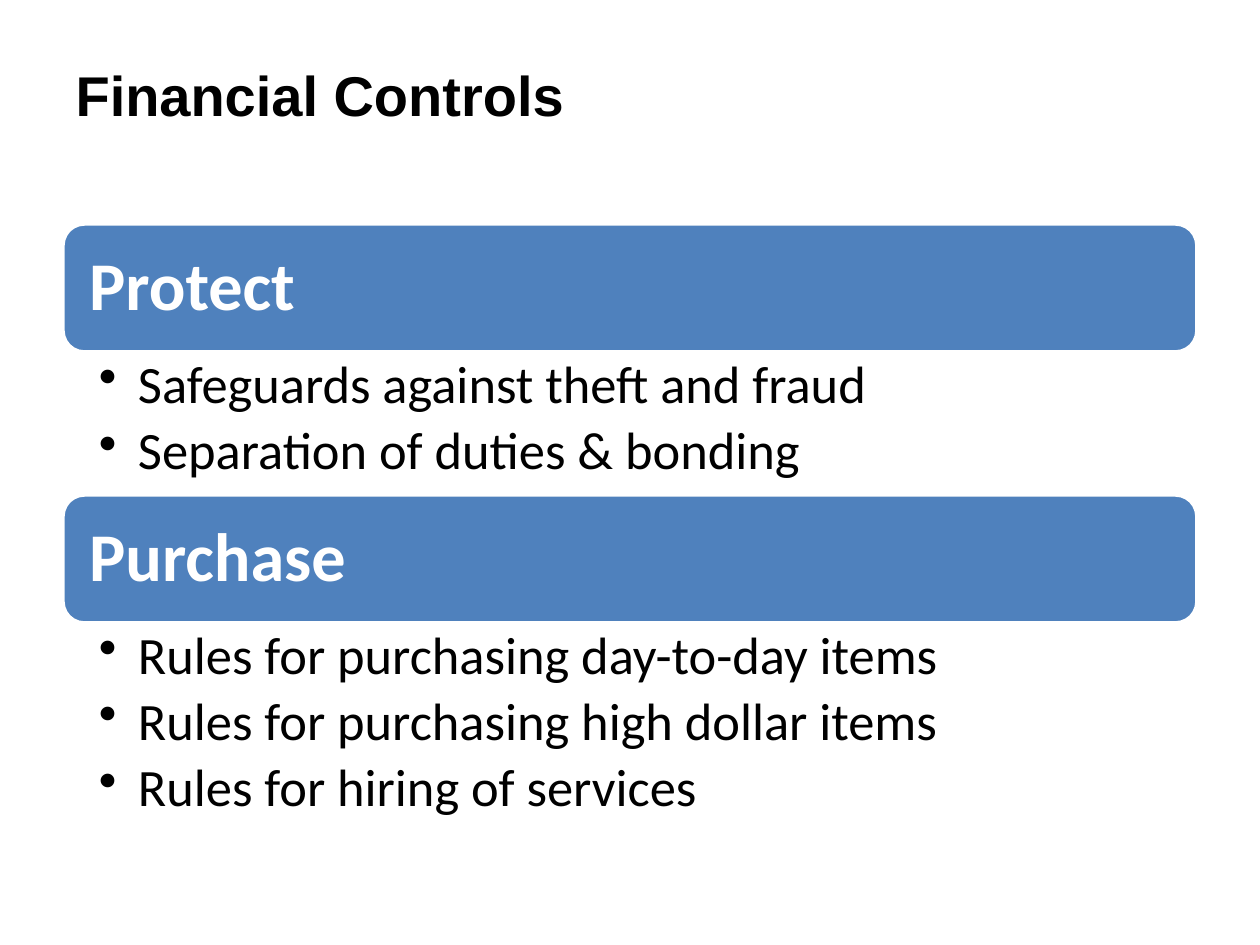
from dataclasses import dataclass

from lxml import etree
from pptx import Presentation
from pptx.dml.color import RGBColor
from pptx.enum.shapes import MSO_SHAPE
from pptx.enum.text import MSO_ANCHOR, PP_ALIGN
from pptx.oxml.ns import qn
from pptx.util import Pt

BAR = MSO_SHAPE.ROUNDED_RECTANGLE
LEFT = PP_ALIGN.LEFT
TOP, MIDDLE = MSO_ANCHOR.TOP, MSO_ANCHOR.MIDDLE

TITLE = "Financial Controls"
GROUPS = [
    ("Protect", ["Safeguards against theft and fraud",
                 "Separation of duties & bonding"]),
    ("Purchase", ["Rules for purchasing day-to-day items",
                  "Rules for purchasing high dollar items",
                  "Rules for hiring of services"]),
]


@dataclass(frozen=True)
class Theme:
    black: RGBColor = RGBColor(0, 0, 0)
    white: RGBColor = RGBColor(255, 255, 255)
    blue: RGBColor = RGBColor(0x4F, 0x81, 0xBD)
    head: str = "Arial"
    body: str = "Calibri"
    title: int = 32
    bar: int = 39
    item: int = 30


THEME = Theme()
SIDE, WIDE = 63, 1134
START, BAR_H = 224, 128
LINE_H, PAD = 74, -5  # list height = lines * LINE_H + PAD
INDENT = 39


def px(n):
    return round(n * 914400 / 126)


def place(shape, x, y, w, h):
    shape.left, shape.top, shape.width, shape.height = map(px, (x, y, w, h))


def set_frame(frame, anchor, left, top, right, bottom):
    frame.word_wrap = True
    frame.vertical_anchor = anchor
    frame.margin_left, frame.margin_top = px(left), px(top)
    frame.margin_right, frame.margin_bottom = px(right), px(bottom)


def style(para, name, size, color, bold=False):
    para.alignment = LEFT
    font = para.font
    font.name, font.size, font.bold = name, Pt(size), bold
    font.color.rgb = color


def add_bullet(para):
    props = para._p.get_or_add_pPr()
    props.set("marL", str(px(INDENT)))
    props.set("indent", str(-px(INDENT)))
    mark = etree.Element(qn("a:buChar"), char="•")
    props.find(qn("a:defRPr")).addprevious(mark)


def add_bar(slide, text, y):
    bar = slide.shapes.add_shape(BAR, px(SIDE), px(y), px(WIDE), px(BAR_H))
    bar.shadow.inherit = False
    bar.fill.solid()
    bar.fill.fore_color.rgb = THEME.blue
    bar.line.color.rgb = THEME.white
    bar.line.width = Pt(2)
    set_frame(bar.text_frame, MIDDLE, 20, 20, 20, 20)
    para = bar.text_frame.paragraphs[0]
    para.text = text
    para.line_spacing = 0.9
    style(para, THEME.body, THEME.bar, THEME.white, True)


def add_list(slide, items, y, high):
    box = slide.shapes.add_textbox(px(SIDE), px(y), px(WIDE), px(high))
    frame = box.text_frame
    set_frame(frame, TOP, 36, 6, 38, 6)
    for i, item in enumerate(items):
        para = frame.add_paragraph() if i else frame.paragraphs[0]
        para.text = item
        para.level = 1
        para.line_spacing = 0.9
        para.space_after = Pt(5.5)
        style(para, THEME.body, THEME.item, THEME.black)
        add_bullet(para)


def main():
    deck = Presentation()
    deck.slide_width, deck.slide_height = px(1260), px(945)
    slide = deck.slides.add_slide(deck.slide_layouts[5])

    title = slide.shapes.title
    place(title, SIDE, 15, WIDE, 158)
    title.text_frame.text = TITLE
    title.text_frame.vertical_anchor = MIDDLE
    style(title.text_frame.paragraphs[0], THEME.head, THEME.title,
          THEME.black, True)

    y = START
    for name, items in GROUPS:
        add_bar(slide, name, y)
        y += BAR_H
        high = len(items) * LINE_H + PAD
        add_list(slide, items, y, high)
        y += high

    deck.save("out.pptx")


if __name__ == "__main__":
    main()
